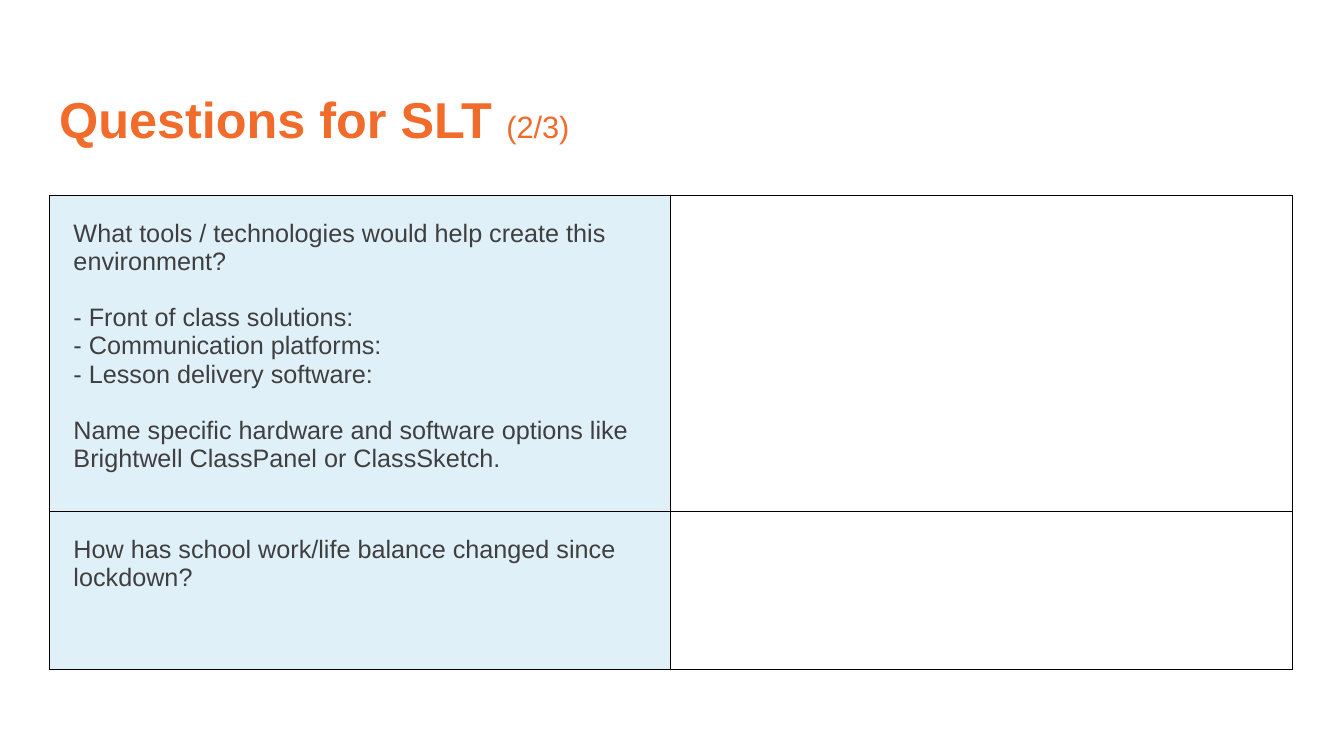
from dataclasses import dataclass

from lxml import etree
from pptx import Presentation
from pptx.dml.color import RGBColor
from pptx.enum.text import MSO_ANCHOR
from pptx.oxml.ns import qn
from pptx.util import Pt

MIDDLE = MSO_ANCHOR.MIDDLE
PX = 9525


@dataclass(frozen=True)
class Theme:
    face: str = "Arial"
    head: str = "F16B2B"
    ink: str = "3F3F3F"
    tint: str = "E0F0F9"
    paper: str = "FFFFFF"
    rule: str = "000000"
    big: int = 36
    note: int = 22
    body: int = 18
    gap: int = 20
    line: float = 0.75


THEME = Theme()

ROWS = [
    (287, [
        "What tools / technologies would help create this environment?",
        "- Front of class solutions:\v- Communication platforms:\v- Lesson delivery software:",
        "Name specific hardware and software options like Brightwell ClassPanel or ClassSketch.",
    ]),
    (151, ["How has school work/life balance changed since lockdown?"]),
]


def px(count):
    return count * PX


def style(font, size, color):
    font.name = THEME.face
    font.size = Pt(size)
    font.color.rgb = RGBColor.from_string(color)


def add_title(slide, text, part):
    box = slide.shapes.add_textbox(px(47), px(47), px(1104), px(139))
    frame = box.text_frame
    frame.word_wrap = True
    frame.vertical_anchor = MIDDLE
    para = frame.paragraphs[0]
    para.line_spacing = 0.9
    style(para.font, THEME.big, THEME.head)
    for words, size, bold in ((text, THEME.big, True), (part, THEME.note, False)):
        run = para.add_run()
        run.text = words
        run.font.size = Pt(size)
        run.font.bold = bold


def add_edges(cell):
    props = cell._tc.get_or_add_tcPr()
    for spot, side in enumerate(("lnL", "lnR", "lnT", "lnB")):
        edge = etree.Element(qn(f"a:{side}"), w=str(Pt(THEME.line)))
        fill = etree.SubElement(edge, qn("a:solidFill"))
        etree.SubElement(fill, qn("a:srgbClr"), val=THEME.rule)
        props.insert(spot, edge)


def fill_cell(cell, color, lines):
    cell.fill.solid()
    cell.fill.fore_color.rgb = RGBColor.from_string(color)
    cell.margin_left = cell.margin_right = px(23)
    cell.margin_top = cell.margin_bottom = px(23)
    add_edges(cell)
    frame = cell.text_frame
    for spot, text in enumerate(lines):
        para = frame.add_paragraph() if spot else frame.paragraphs[0]
        para.text = text
        if spot:
            para.space_before = Pt(THEME.gap)
        style(para.font, THEME.body, THEME.ink)


def add_grid(slide, rows):
    wide = 592
    high = sum(size for size, _ in rows)
    frame = slide.shapes.add_table(
        len(rows), 2, px(47), px(186), px(2 * wide), px(high))
    table = frame.table
    table.first_row = False
    table.horz_banding = False
    props = table._tbl.tblPr
    props.remove(props.find(qn("a:tableStyleId")))
    for col in table.columns:
        col.width = px(wide)
    for spot, (size, lines) in enumerate(rows):
        table.rows[spot].height = px(size)
        fill_cell(table.cell(spot, 0), THEME.tint, lines)
        fill_cell(table.cell(spot, 1), THEME.paper, [])


def main():
    deck = Presentation()
    deck.slide_width = px(1280)
    deck.slide_height = px(720)
    slide = deck.slides.add_slide(deck.slide_layouts[6])
    add_title(slide, "Questions for SLT ", "(2/3)")
    add_grid(slide, ROWS)
    deck.save("out.pptx")


if __name__ == "__main__":
    main()
